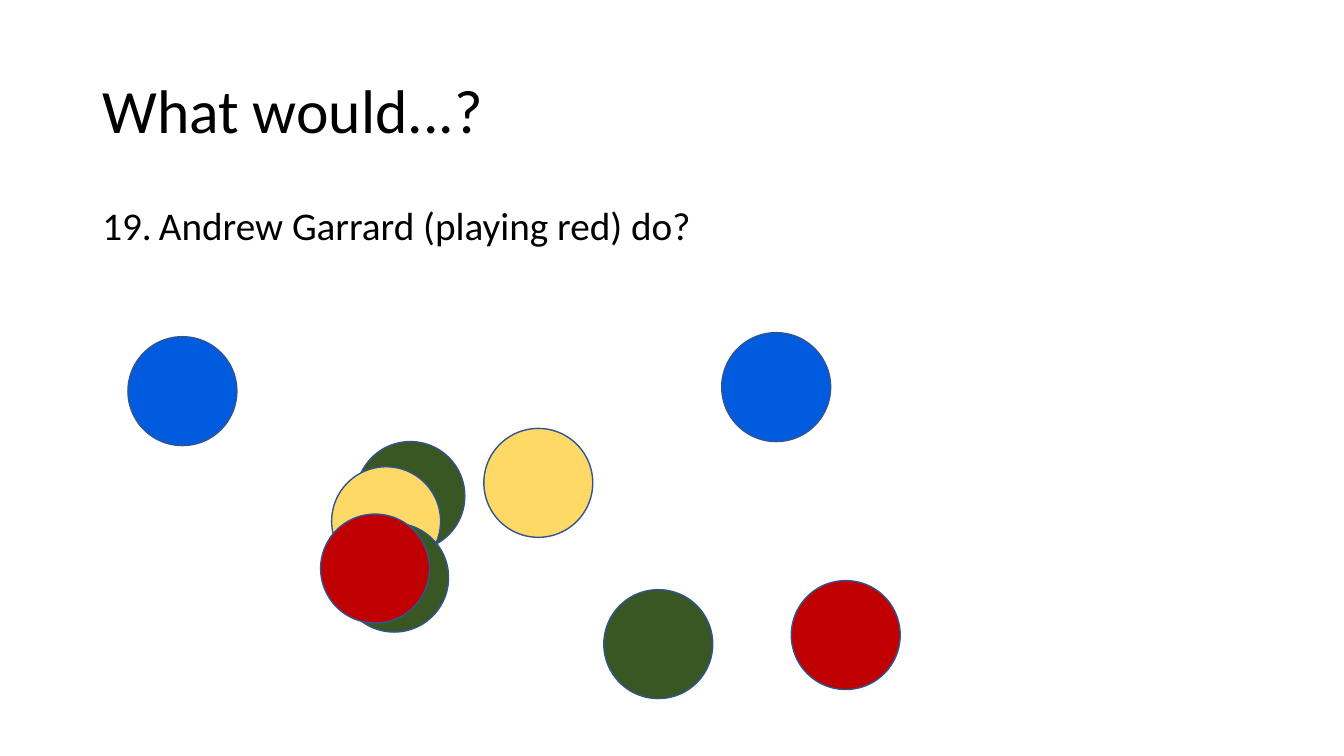
from lxml import etree
from pptx import Presentation
from pptx.dml.color import RGBColor
from pptx.enum.shapes import MSO_SHAPE
from pptx.enum.text import MSO_ANCHOR
from pptx.oxml.ns import qn
from pptx.util import Pt

OVAL = MSO_SHAPE.OVAL
TOP, MIDDLE = MSO_ANCHOR.TOP, MSO_ANCHOR.MIDDLE

THEME = {
    "font": "Calibri",
    "title_size": 44,
    "body_size": 28,
    "text": RGBColor.from_string("000000"),
    "outline": RGBColor.from_string("325491"),
    "green": RGBColor.from_string("385723"),
    "yellow": RGBColor.from_string("FFD966"),
    "blue": RGBColor.from_string("005BDF"),
    "red": RGBColor.from_string("C00000"),
}

BALL_SIZE = 77.8
BALLS = [
    ("green", 254.2, 315.4),
    ("yellow", 236.9, 333.4),
    ("green", 242.6, 373.7),
    ("blue", 91.4, 240.5),
    ("green", 431.3, 421.2),
    ("red", 229, 367.2),
    ("yellow", 345.6, 306),
    ("blue", 515.5, 237.6),
    ("red", 565.2, 414.7),
]


def add_text(page, text, top, height, size, anchor, number=None):
    box = page.shapes.add_textbox(Pt(66), Pt(top), Pt(828), Pt(height))
    frame = box.text_frame
    frame.word_wrap = True
    frame.vertical_anchor = anchor
    para = frame.paragraphs[0]
    para.text = text
    para.line_spacing = 0.9
    if number:
        properties = para._p.get_or_add_pPr()
        properties.set("marL", str(Pt(40.5)))
        properties.set("indent", str(Pt(-40.5)))
        bullet = etree.SubElement(properties, qn("a:buAutoNum"))
        bullet.set("type", "arabicPeriod")
        bullet.set("startAt", str(number))
    para.font.name = THEME["font"]
    para.font.size = Pt(size)
    para.font.color.rgb = THEME["text"]


deck = Presentation()
deck.slide_width, deck.slide_height = Pt(960), Pt(540)
page = deck.slides.add_slide(deck.slide_layouts[6])

add_text(page, "What would...?", 28.8, 104.4, THEME["title_size"], MIDDLE)
add_text(page, "Andrew Garrard (playing red) do?", 144, 342.7,
         THEME["body_size"], TOP, number=19)

for color, left, top in BALLS:
    ball = page.shapes.add_shape(OVAL, Pt(left), Pt(top), Pt(BALL_SIZE), Pt(BALL_SIZE))
    ball.shadow.inherit = False
    ball.fill.solid()
    ball.fill.fore_color.rgb = THEME[color]
    ball.line.color.rgb = THEME["outline"]
    ball.line.width = Pt(1)

deck.save("out.pptx")
